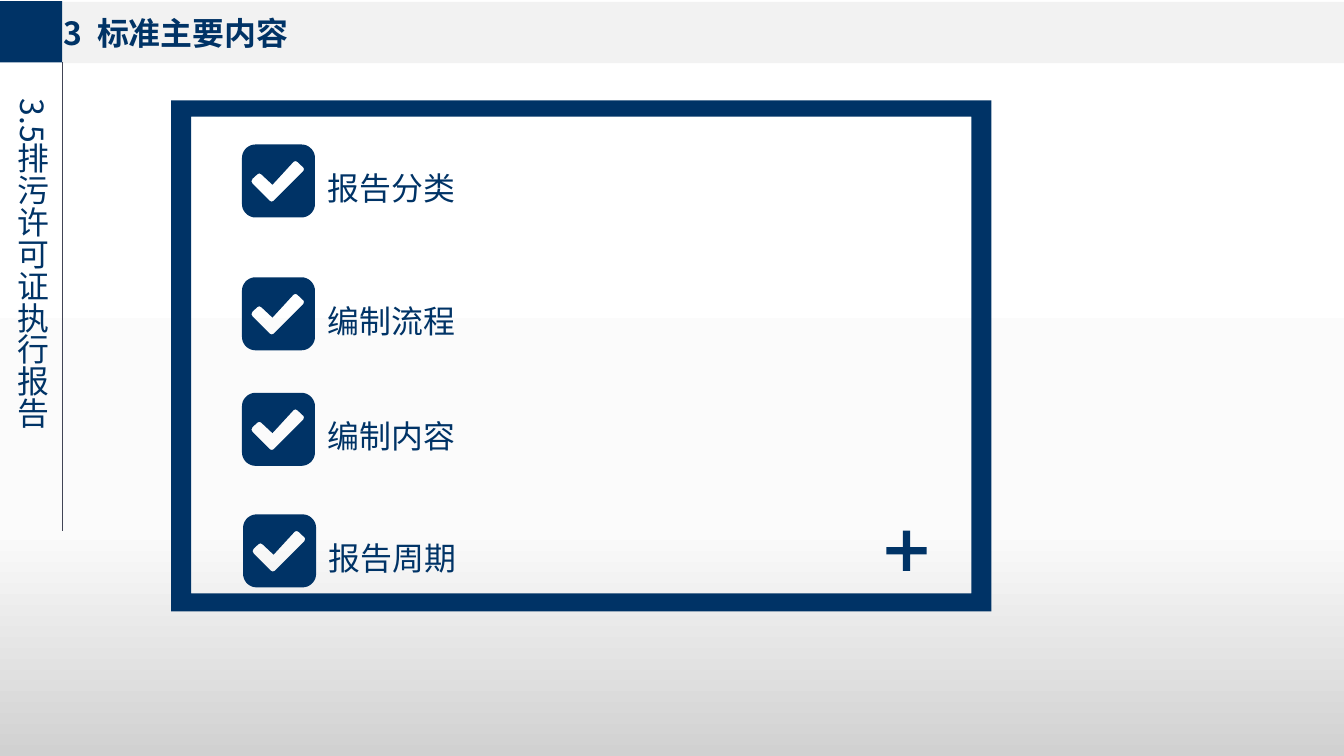
"""Builds the slide on the pollutant permit execution report."""
from copy import deepcopy
from math import cos, radians, sin

from lxml import etree
from pptx import Presentation
from pptx import util as u
from pptx.dml.color import RGBColor
from pptx.enum import shapes, text
from pptx.oxml.ns import qn

COLORS = {"navy": "003366", "band": "F2F2F2", "rule": "414455"}
BACKGROUND = [(0.14, "FFFFFF"), (0.7, "FBFBFB"), (1, "D1D1D1")]
CJK, LATIN = "Noto Sans CJK SC", "Roboto Condensed"
TITLE = [("3 ", 270), ("标准主要内容", 0)]
SECTION = [("3.5排污许可证执行报告", 0)]
TOPICS = [
    ("报告分类", 6.43, 3.84),
    ("编制流程", 6.43, 7.37),
    ("编制内容", 6.43, 10.44),
    ("报告周期", 6.46, 13.67),
]
BARS = [("band", 1.65, 0.05, 34.06, 1.63), ("navy", 0, 0.03, 1.65, 1.63)]
FRAME_OUTER = (4.55, 2.67, 26.34, 16.25)
FRAME_INNER = (5.08, 3.1, 25.81, 15.77)
BADGE, RADIUS, LABEL_SHIFT = 1.94, 0.36, 2.03
TICK = [
    (1.63, 0.71), (1.65, 0.65), (1.63, 0.61), (1.47, 0.46),
    (1.42, 0.44), (1.37, 0.46), (0.81, 1.07), (0.51, 0.79),
    (0.46, 0.77), (0.41, 0.79), (0.28, 0.91), (0.25, 0.98),
    (0.28, 1.04), (0.74, 1.5), (0.79, 1.52), (0.84, 1.5),
]


def rgb(name):
    return RGBColor.from_string(COLORS[name])


def paint(sp, color):
    sp.shadow.inherit = False
    sp.fill.solid()
    sp.fill.fore_color.rgb = rgb(color)
    sp.line.fill.background()


def add_preset(s, kind, color, *box):
    sp = s.shapes.add_shape(kind, *map(u.Cm, box))
    paint(sp, color)
    return sp


def add_outline(s, color, *contours):
    first, *holes = [[(u.Cm(x), u.Cm(y)) for x, y in c] for c in contours]
    builder = s.shapes.build_freeform(*first[0])
    builder.add_line_segments(first[1:])
    for hole in holes:
        builder.move_to(*hole[0])
        builder.add_line_segments(hole[1:])
    paint(builder.convert_to_shape(), color)


def corners(left, top, right, bottom):
    return [(left, top), (right, top), (right, bottom), (left, bottom)]


def rounded_square(side, radius):
    near, far = radius, side - radius
    centres = corners(near, near, far, far)
    return [
        (x + radius * cos(radians(a)), y + radius * sin(radians(a)))
        for i, (x, y) in enumerate(centres)
        for a in range(180 + 90 * i, 271 + 90 * i, 10)
    ]


def shift(points, left, top):
    return [(left + x, top + y) for x, y in points]


def add_text(s, runs, box, font, margins=(0, 0), wrap=False, bold=False,
             spacing=None, vert=None):
    tf = s.shapes.add_textbox(*map(u.Cm, box)).text_frame
    side, edge = map(u.Cm, margins)
    frame = {"margin_left": side, "margin_right": side, "margin_top": edge,
             "margin_bottom": edge, "word_wrap": wrap,
             "auto_size": text.MSO_AUTO_SIZE.SHAPE_TO_FIT_TEXT}
    for key, value in frame.items():
        setattr(tf, key, value)
    if vert:
        tf._txBody.bodyPr.set("vert", vert)
    p = tf.paragraphs[0]
    p.line_spacing = spacing
    for words, tracking in runs:
        r = p.add_run()
        r.text = words
        for key, value in {"name": font, "size": u.Pt(24), "bold": bold}.items():
            setattr(r.font, key, value)
        r.font.color.rgb = rgb("navy")
        props = r._r.get_or_add_rPr()
        etree.SubElement(props, qn("a:ea")).set("typeface", font)
        if tracking:
            props.set("spc", str(tracking))


def set_background(s):
    fill = s.background.fill
    fill.gradient()
    fill.gradient_angle = 270
    stops = s.element.find(".//" + qn("a:gsLst"))
    stops.append(deepcopy(stops[0]))
    for stop, (position, color) in zip(fill.gradient_stops, BACKGROUND):
        stop.position = position
        stop.color.rgb = RGBColor.from_string(color)


def add_rule(s, *ends):
    line = s.shapes.add_connector(shapes.MSO_CONNECTOR.STRAIGHT, *map(u.Cm, ends))
    line.line.color.rgb = rgb("rule")
    line.line.width = u.Pt(0.25)
    etree.SubElement(line._element.spPr, qn("a:effectLst"))


def main():
    prs = Presentation()
    prs.slide_width, prs.slide_height = u.Cm(35.71), u.Cm(20.09)
    s = prs.slides.add_slide(prs.slide_layouts[6])
    set_background(s)
    for color, *box in BARS:
        add_preset(s, shapes.MSO_SHAPE.RECTANGLE, color, *box)
    add_text(s, TITLE, (1.7, 0.36, 6.22, 1.04), CJK, bold=True)
    add_text(s, SECTION, (0.36, 2.62, 1.02, 13.61), CJK, wrap=True, vert="eaVert")
    add_rule(s, 1.65, 14.1, 1.65, 1.65)
    add_outline(s, "navy", corners(*FRAME_OUTER), corners(*FRAME_INNER))
    plus = add_preset(s, shapes.MSO_SHAPE.CROSS, "navy", 23.55, 14.1, 1.07, 1.07)
    plus.adjustments[0] = 0.41
    for label, left, top in TOPICS:
        add_text(s, [(label, 0)], (left + LABEL_SHIFT, top, 3.94, 1.6), LATIN,
                 margins=(0.25, 0.13), spacing=1.5)
        add_outline(s, "navy", shift(rounded_square(BADGE, RADIUS), left, top),
                    shift(TICK, left, top))
    prs.save("out.pptx")


if __name__ == "__main__":
    main()
